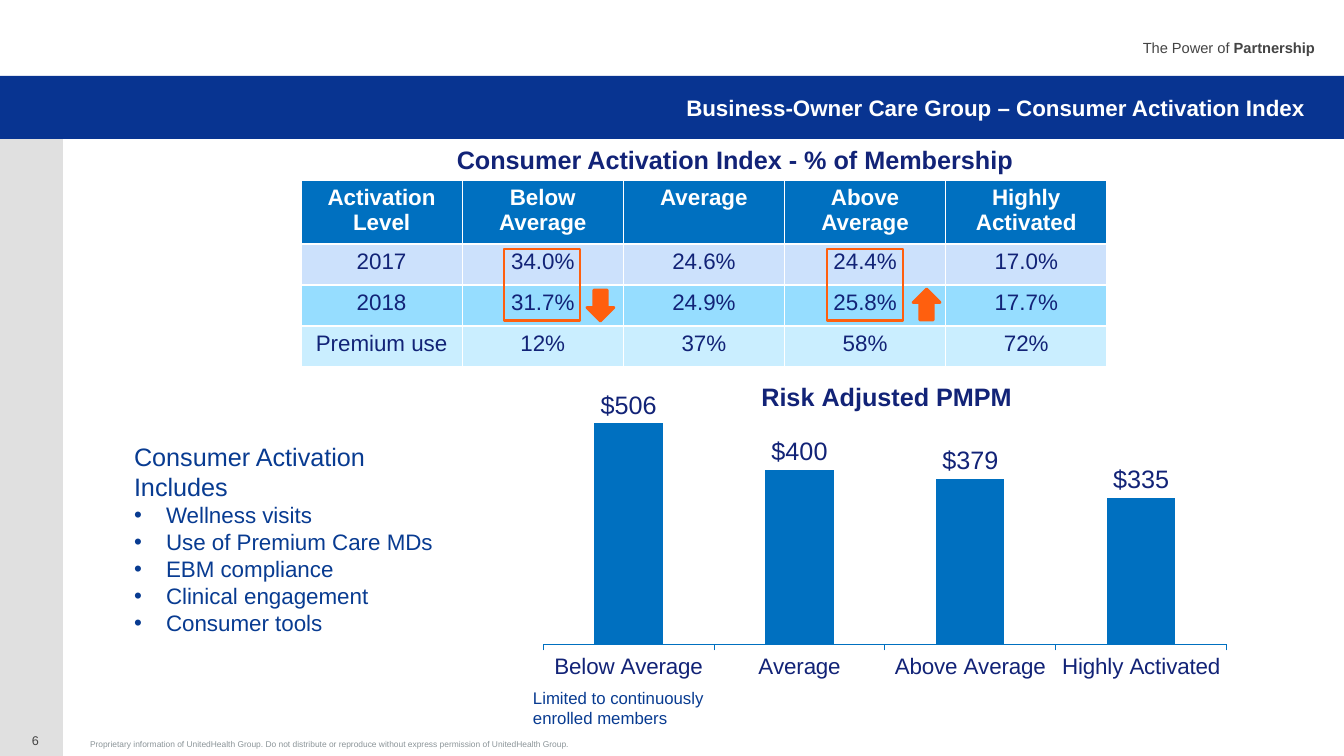
from lxml import etree
from pptx import Presentation
from pptx import util as u
from pptx.chart.data import CategoryChartData
from pptx.dml.color import RGBColor
from pptx.enum import chart as charts, shapes, text
from pptx.oxml.ns import qn

NAVY = RGBColor(0x12, 0x23, 0x77)
BAND_BLUE = RGBColor(0x08, 0x34, 0x91)
NOTE_BLUE = RGBColor(0x08, 0x3B, 0x91)
BLUE = RGBColor(0x00, 0x70, 0xC0)
PALE_BLUE = RGBColor(0xCC, 0xE1, 0xFC)
SKY_BLUE = RGBColor(0x96, 0xDD, 0xFF)
ICE_BLUE = RGBColor(0xCA, 0xEE, 0xFF)
ORANGE = RGBColor(0xFF, 0x5F, 0x0E)
DARK_GRAY = RGBColor(0x44, 0x44, 0x44)
FOOTER_GRAY = RGBColor(0x8C, 0x95, 0x99)
SIDE_GRAY = RGBColor(0xE0, 0xE0, 0xE0)
WHITE = RGBColor(0xFF, 0xFF, 0xFF)

TITLE = "Business-Owner Care Group – Consumer Activation Index"
TAGLINE = ["The Power of", " Partnership"]
FOOTER = ("Proprietary information of UnitedHealth Group. Do not distribute or reproduce "
          "without express permission of UnitedHealth Group.")
TABLE_TITLE = "Consumer Activation Index - % of Membership"
HEADER = ["Activation Level", "Below Average", "Average", "Above Average", "Highly Activated"]
ACTIVATION_TABLES = [
    [(HEADER, 64, BLUE), (["2017", "34.0%", "24.6%", "24.4%", "17.0%"], 41, PALE_BLUE)],
    [(["2018", "31.7%", "24.9%", "25.8%", "17.7%"], 41, SKY_BLUE)],
    [(["Premium use", "12%", "37%", "58%", "72%"], 41, ICE_BLUE)],
]
INCLUDES = ["Consumer Activation Includes", "Wellness visits", "Use of Premium Care MDs",
            "EBM compliance", "Clinical engagement", "Consumer tools"]
CHART_TITLE = "Risk Adjusted PMPM"
PMPM = {"Below Average": 506, "Average": 400, "Above Average": 379, "Highly Activated": 335}
CHART_NOTE = "Limited to continuously enrolled members"
HIGHLIGHTS = [(504, 249, 76, 72), (827, 249, 76, 72)]
TREND_ARROWS = [(587, 290, 27, 31, 0), (913, 289, 27, 31, 180)]

TABLE_LEFT, TABLE_TOP, TABLE_WIDTH = 301, 180, 806
SCALE = u.Inches(1) / 100.8
LEFT, CENTER, RIGHT = text.PP_ALIGN.LEFT, text.PP_ALIGN.CENTER, text.PP_ALIGN.RIGHT
TOP, MIDDLE, BOTTOM = text.MSO_ANCHOR.TOP, text.MSO_ANCHOR.MIDDLE, text.MSO_ANCHOR.BOTTOM


def px(*lengths):
    return [u.Emu(round(length * SCALE)) for length in lengths]


def style(font, size, color, bold=False):
    font.name, font.size, font.bold = "Arial", u.Pt(size), bold
    font.color.rgb = color


def set_frame(frame, insets, anchor, wrap=True):
    frame.auto_size = text.MSO_AUTO_SIZE.NONE
    frame.word_wrap = wrap
    frame.vertical_anchor = anchor
    frame.margin_left, frame.margin_top, frame.margin_right, frame.margin_bottom = px(*insets)


def add_text(page, place, words, size, color, align=LEFT, bold=False,
             insets=(5, 5, 5, 5), anchor=TOP, wrap=True):
    box = page.shapes.add_textbox(*px(*place))
    set_frame(box.text_frame, insets, anchor, wrap)
    para = box.text_frame.paragraphs[0]
    para.text, para.alignment = words, align
    style(para.font, size, color, bold)
    return para


def add_block(page, kind, place, fill=None, line=None):
    block = page.shapes.add_shape(kind, *px(*place))
    block.shadow.inherit = False
    if fill is None:
        block.fill.background()
    else:
        block.fill.solid()
        block.fill.fore_color.rgb = fill
    if line is None:
        block.line.fill.background()
    else:
        block.line.color.rgb, block.line.width = line, u.Pt(2)
    return block


def add_activation_table(page, top, rows):
    height = sum(row_height for _, row_height, _ in rows)
    table = page.shapes.add_table(len(rows), len(HEADER),
                                  *px(TABLE_LEFT, top, TABLE_WIDTH, height)).table
    for r, (values, row_height, fill) in enumerate(rows):
        table.rows[r].height = px(row_height)[0]
        heading = values is HEADER
        for c, value in enumerate(values):
            cell = table.cell(r, c)
            cell.text = value
            cell.fill.solid()
            cell.fill.fore_color.rgb = fill
            para = cell.text_frame.paragraphs[0]
            para.alignment = CENTER
            style(para.font, 16, WHITE if heading else NAVY, heading)
    return top + height


def set_layout(parent, index, **settings):
    for old in parent.findall(qn("c:layout")):
        parent.remove(old)
    layout = etree.Element(qn("c:layout"))
    manual = etree.SubElement(layout, qn("c:manualLayout"))
    for name, value in settings.items():
        etree.SubElement(manual, qn(f"c:{name}")).set("val", str(value))
    parent.insert(index, layout)


def add_pmpm_chart(page):
    data = CategoryChartData()
    data.categories = list(PMPM)
    data.add_series(CHART_TITLE, list(PMPM.values()))
    chart = page.shapes.add_chart(charts.XL_CHART_TYPE.COLUMN_CLUSTERED,
                                  *px(529, 366, 712, 324), data).chart
    style(chart.font, 10, NAVY)
    chart.has_legend = False
    chart.has_title = True
    title = chart.chart_title
    title.text_frame.text = CHART_TITLE
    style(title.text_frame.paragraphs[0].font, 18, NAVY, True)
    title.include_in_layout = False
    set_layout(title._element, 1, xMode="edge", yMode="edge", x=0.32, y=0.03)
    set_layout(chart._chartSpace.chart.plotArea, 0, layoutTarget="inner", xMode="edge",
               yMode="edge", x=0.02, y=0.05, w=0.96, h=0.81)

    values = chart.value_axis
    values.minimum_scale, values.maximum_scale = 0, 600
    values.has_major_gridlines = False
    values.visible = False
    categories = chart.category_axis
    categories.major_tick_mark = charts.XL_TICK_MARK.OUTSIDE
    categories.format.line.color.rgb = BLUE
    categories.format.line.width = u.Pt(0.75)
    style(categories.tick_labels.font, 16, NAVY)

    plot = chart.plots[0]
    plot.gap_width, plot.vary_by_categories = 150, False
    bars = plot.series[0]
    bars.format.fill.solid()
    bars.format.fill.fore_color.rgb = BLUE
    labels = bars.data_labels
    labels.show_value = True
    labels.number_format, labels.number_format_is_linked = '"$"#,##0', False
    labels.position = charts.XL_LABEL_POSITION.OUTSIDE_END
    style(labels.font, 18, NAVY)


def fill_includes(body):
    body.left, body.top, body.width, body.height = px(129, 436, 336, 207)
    frame = body.text_frame
    set_frame(frame, (5, 5, 5, 5), TOP)
    frame.text = "\n".join(INCLUDES)
    for number, para in enumerate(frame.paragraphs):
        properties = para._p.get_or_add_pPr()
        indent = px(32)[0] if number else 0
        properties.set("marL", str(indent))
        properties.set("indent", str(-indent))
        if number:
            etree.SubElement(properties, qn("a:buFont")).set("typeface", "Arial")
            etree.SubElement(properties, qn("a:buChar")).set("char", "•")
        else:
            etree.SubElement(properties, qn("a:buNone"))
        para.space_before = u.Pt(0)
        para.alignment = LEFT
        style(para.font, 16 if number else 18, NOTE_BLUE)


def main():
    deck = Presentation()
    deck.slide_width, deck.slide_height = px(1344, 756)
    page = deck.slides.add_slide(deck.slide_layouts[1])
    title, body = page.placeholders
    rectangle = shapes.MSO_SHAPE.RECTANGLE
    bands = [add_block(page, rectangle, (0, 125, 63, 631), SIDE_GRAY),
             add_block(page, rectangle, (0, 76, 1344, 63), BAND_BLUE)]
    for band in bands:
        title._element.addprevious(band._element)

    title.left, title.top, title.width, title.height = px(168, 76, 1142, 63)
    set_frame(title.text_frame, (0, 0, 5, 0), MIDDLE)
    title.text_frame.text = TITLE
    para = title.text_frame.paragraphs[0]
    para.alignment = RIGHT
    style(para.font, 16, WHITE, True)

    para = add_text(page, (952, 39, 373, 17), TAGLINE[0], 10.5, DARK_GRAY, RIGHT,
                    insets=(10, 5, 10, 5), anchor=MIDDLE)
    span = para.add_run()
    span.text, span.font.bold = TAGLINE[1], True
    add_text(page, (90, 739, 859, 10), FOOTER, 6, FOOTER_GRAY, insets=(0, 0, 0, 0), anchor=BOTTOM)
    add_text(page, (27, 728, 17, 25), "6", 9, DARK_GRAY, CENTER, anchor=MIDDLE, wrap=False)
    add_text(page, (433, 139, 604, 40), TABLE_TITLE, 18, NAVY, CENTER, True)
    add_pmpm_chart(page)
    top = TABLE_TOP
    for rows in ACTIVATION_TABLES:
        top = add_activation_table(page, top, rows)
    fill_includes(body)
    for place in HIGHLIGHTS:
        add_block(page, rectangle, place, line=ORANGE)
    for *place, turn in TREND_ARROWS:
        add_block(page, shapes.MSO_SHAPE.DOWN_ARROW, place, ORANGE, ORANGE).rotation = turn
    add_text(page, (528, 683, 232, 50), CHART_NOTE, 12, NOTE_BLUE)
    deck.save("out.pptx")


if __name__ == "__main__":
    main()
